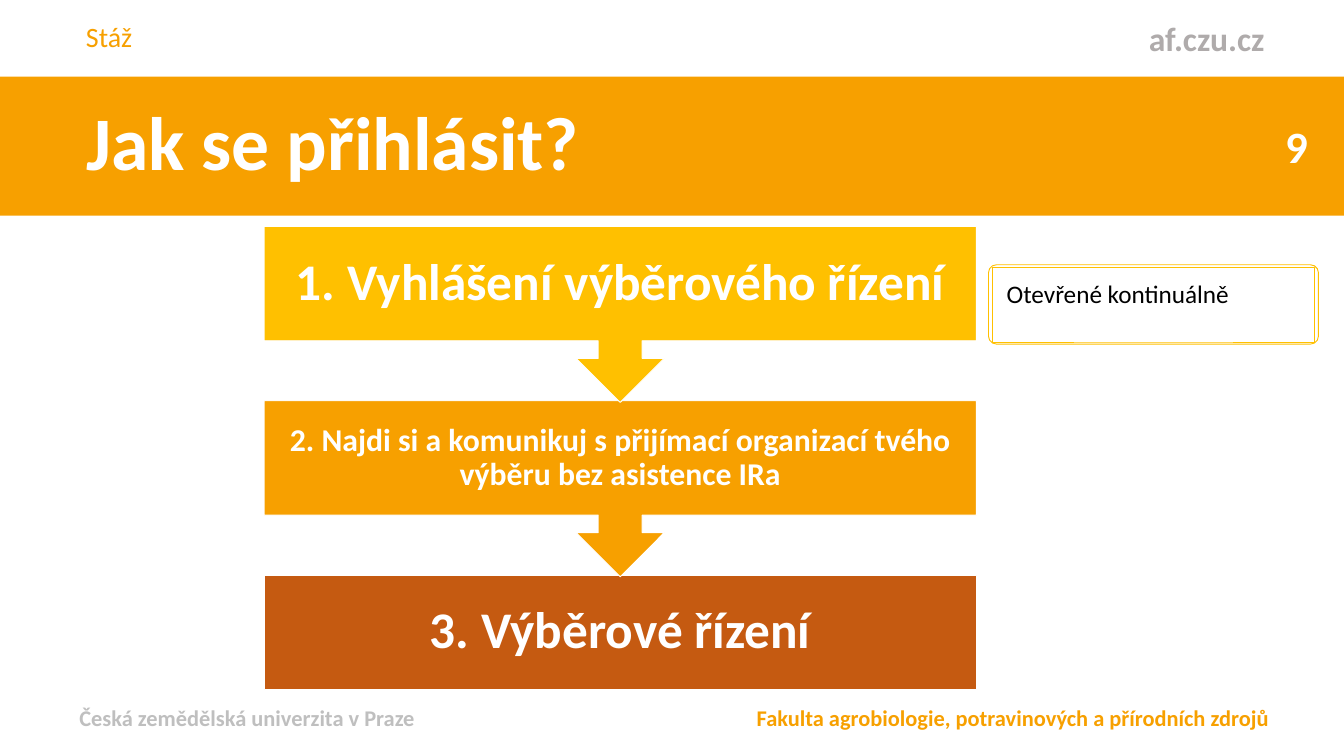
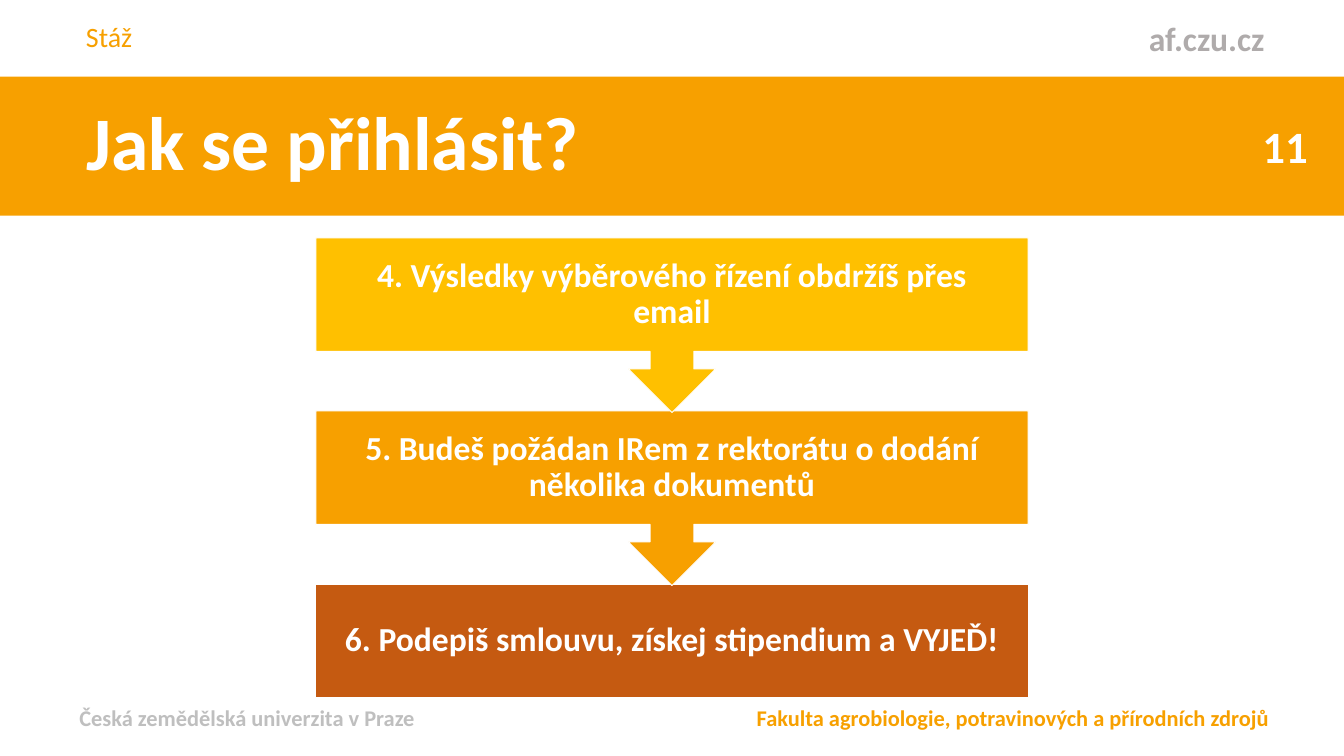
"""Build two slides on how to apply, each with a three-step flow."""
from dataclasses import dataclass

from pptx import Presentation
from pptx.dml.color import RGBColor
from pptx.enum.shapes import MSO_SHAPE
from pptx.enum.text import MSO_ANCHOR, MSO_AUTO_SIZE, PP_ALIGN
from pptx.util import Pt

RECT = MSO_SHAPE.RECTANGLE
ROUND = MSO_SHAPE.ROUNDED_RECTANGLE
CALLOUT = MSO_SHAPE.DOWN_ARROW_CALLOUT
LEFT, CENTER, RIGHT = PP_ALIGN.LEFT, PP_ALIGN.CENTER, PP_ALIGN.RIGHT
TOP, MIDDLE = MSO_ANCHOR.TOP, MSO_ANCHOR.MIDDLE
FIXED = MSO_AUTO_SIZE.NONE
PX = 9144
WIDE, HIGH = 2000, 1125


@dataclass(frozen=True)
class Theme:
    """Font, colours and type sizes."""
    font: str = "Calibri"
    white: str = "FFFFFF"
    black: str = "000000"
    orange: str = "F7A000"
    gold: str = "FFC000"
    rust: str = "C55A11"
    gray: str = "AFABAB"
    pale: str = "BFBFBF"
    title: int = 81
    page: int = 48
    site: int = 36
    topic: int = 30
    note: int = 27
    foot: int = 24


THEME = Theme()
FILLS = (THEME.gold, THEME.orange, THEME.rust)
BODY = 0.247
NECK = 0.65
PAD = 0.78


def scale(box):
    """Turn a box in px into EMU."""
    return [round(side * PX) for side in box]


def write(shape, text, size, color, bold=False, align=LEFT, anchor=MIDDLE,
          inset=(10, 5), space=None):
    """Put formatted text into a shape."""
    frame = shape.text_frame
    frame.auto_size = FIXED
    frame.word_wrap = True
    frame.vertical_anchor = anchor
    across, down = scale(inset)
    frame.margin_left = frame.margin_right = across
    frame.margin_top = frame.margin_bottom = down
    frame.text = text
    para = frame.paragraphs[0]
    para.alignment = align
    para.space_before = Pt(0)
    para.line_spacing = space
    font = para.runs[0].font
    font.name, font.size, font.bold = THEME.font, Pt(size), bold
    font.color.rgb = RGBColor.from_string(color)


def label(slide, box, text, size, color, **style):
    """Add a text box."""
    write(slide.shapes.add_textbox(*scale(box)), text, size, color, **style)


def block(slide, kind, box, fill, line=None):
    """Add a filled shape, outlined when a line colour is given."""
    shape = slide.shapes.add_shape(kind, *scale(box))
    shape.shadow.inherit = False
    shape.fill.solid()
    shape.fill.fore_color.rgb = RGBColor.from_string(fill)
    if line:
        shape.line.color.rgb = RGBColor.from_string(line)
        shape.line.width = Pt(1)
    else:
        shape.line.fill.background()
    return shape


def header(slide, box, page):
    """Place the topic, site, title band and page number."""
    x, y, w, h = box
    band, edge = 114, 118
    block(slide, RECT, (x, y + band, w, h - band), THEME.orange)
    label(slide, (x + w - 452, y, 334, band), "af.czu.cz", THEME.site,
          THEME.gray, bold=True, align=RIGHT, inset=(0, 0))
    label(slide, (x + w - 237, y + 172, 193, 91), page, THEME.page,
          THEME.white, bold=True, align=RIGHT, anchor=TOP)
    title = slide.shapes.title
    slide.shapes._spTree.append(title._element)
    place = scale((x + edge, y + band, 1458, h - band))
    title.left, title.top, title.width, title.height = place
    write(title, "Jak se přihlásit?", THEME.title, THEME.white,
          bold=True, space=0.9)
    label(slide, (x + edge, y, 1458, band), "Stáž", THEME.topic,
          THEME.orange, space=0.9)


def footer(slide, box):
    """Place the university and the faculty at the two ends."""
    x, y, w, h = box
    style = dict(bold=True, inset=(0, 0))
    label(slide, (x, y, 585, h), "Česká zemědělská univerzita v Praze",
          THEME.foot, THEME.pale, **style)
    label(slide, (x + w - 869, y, 869, h),
          "Fakulta agrobiologie, potravinových a přírodních zdrojů",
          THEME.foot, THEME.orange, align=RIGHT, **style)


def flow(slide, box, steps):
    """Stack the steps, each arrow pointing to the next one."""
    x, y, w, h = box
    body = h * BODY
    last = len(steps) - 1
    pitch = (h - body) / last
    for i in range(last, -1, -1):
        text, size = steps[i]
        kind, tall = (RECT, body) if i == last else (CALLOUT, body / NECK)
        step = block(slide, kind, (x, y + i * pitch, w, tall),
                     FILLS[i], THEME.white)
        write(step, text, size, THEME.white, bold=True, align=CENTER,
              inset=(size * PAD, size * PAD), space=0.9)


def note(slide, box, text):
    """Place a remark in a double frame."""
    x, y, w, h = box
    outer = block(slide, ROUND, box, THEME.white, THEME.gold)
    outer.adjustments[0] = 0.1
    inner = block(slide, RECT, (x + 6, y + 4, w - 12, h - 7),
                  THEME.white, THEME.gold)
    write(inner, text, THEME.note, THEME.black, anchor=TOP,
          inset=(21, 21), space=0.9)


def page(deck, number, box, steps):
    """Add a slide with its frame and flow."""
    slide = deck.slides.add_slide(deck.slide_layouts[5])
    header(slide, (0, 0, WIDE, 321), number)
    footer(slide, (118, 1011, 1770, 114))
    flow(slide, box, steps)
    return slide


def main():
    """Build and save the deck."""
    deck = Presentation()
    deck.slide_width, deck.slide_height = scale((WIDE, HIGH))
    first = page(deck, "9", (393, 337, 1060, 689), (
        ("1. Vyhlášení výběrového řízení", 55),
        ("2. Najdi si a komunikuj s přijímací organizací tvého výběru "
         "bez asistence IRa", 34),
        ("3. Výběrové řízení", 55)))
    note(first, (1471, 394, 491, 118), "Otevřené kontinuálně")
    page(deck, "11", (470, 354, 1060, 684), (
        ("4. Výsledky výběrového řízení obdržíš přes email", 36),
        ("5. Budeš požádan IRem z rektorátu o dodání několika dokumentů", 36),
        ("6. Podepiš smlouvu, získej stipendium a VYJEĎ!", 36)))
    deck.save("out.pptx")


if __name__ == "__main__":
    main()
